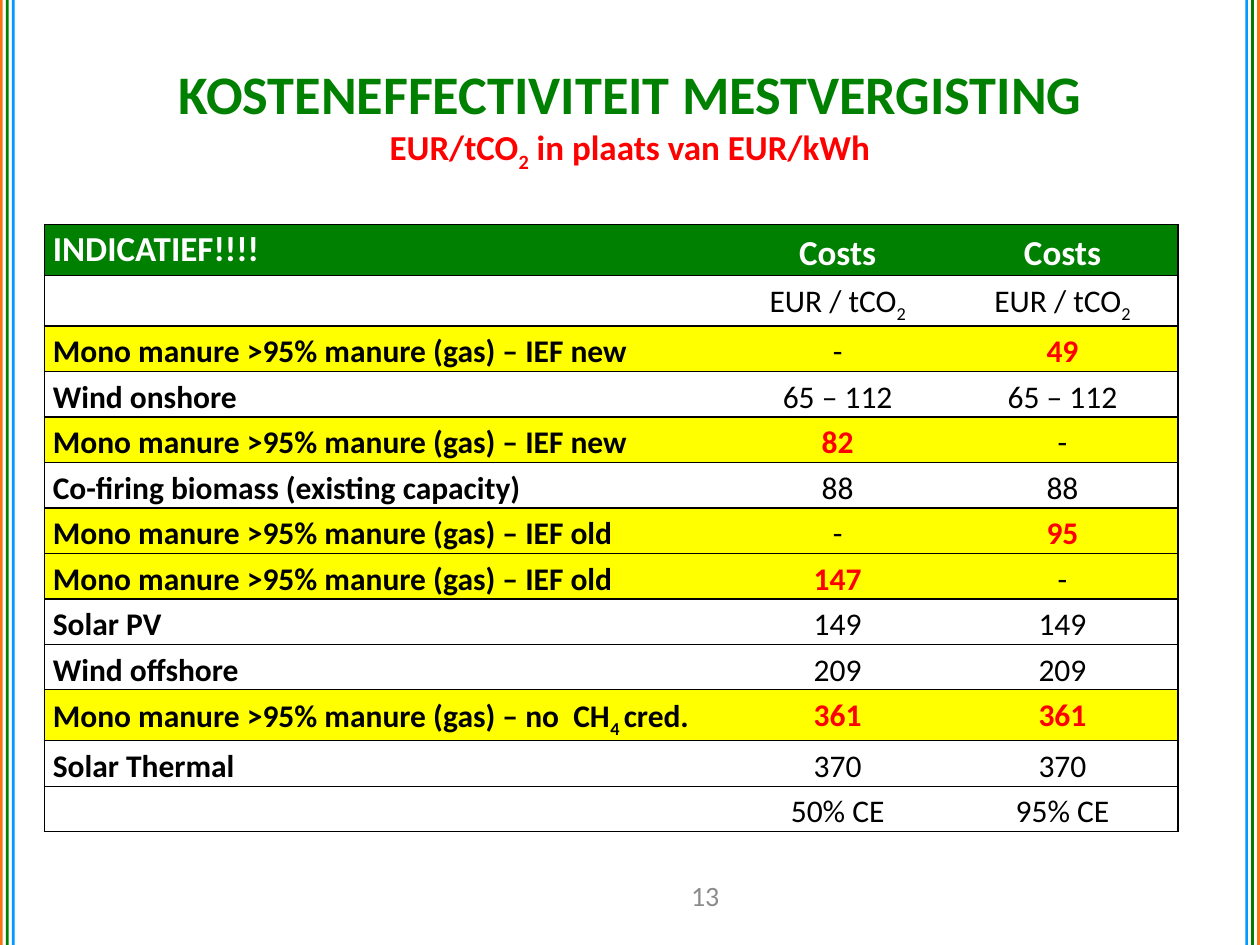
from dataclasses import dataclass
from lxml.etree import SubElement
from pptx import Presentation
from pptx.dml.color import RGBColor
from pptx.enum.shapes import MSO_SHAPE
from pptx.enum.text import MSO_ANCHOR, PP_ALIGN
from pptx.oxml.ns import qn
from pptx.util import Pt


@dataclass(frozen=True)
class Theme:
    font: str = "Calibri"
    green: str = "008000"
    orange: str = "F67616"
    blue: str = "0099FF"
    red: str = "FF0000"
    yellow: str = "FFFF00"
    white: str = "FFFFFF"
    black: str = "000000"
    grey: str = "8C8C8C"
    title: int = 31
    head: int = 20
    body: int = 18
    small: int = 16


def write(para, text, font, size, color, bold=False, align=PP_ALIGN.CENTER, space=None):
    """Fill a paragraph; parts between underscores become subscripts."""
    para.alignment = align
    if space:
        para.line_spacing = space
    for i, part in enumerate(text.split("_")):
        run = para.add_run()
        run.text = part
        run.font.name = font
        run.font.size = Pt(size)
        run.font.bold = bold
        run.font.color.rgb = RGBColor.from_string(color)
        if i % 2:
            run.font._element.set("baseline", "-25000")


def rule(cell, sides, color):
    """Draw the named cell sides and hide the others."""
    props = cell._tc.get_or_add_tcPr()
    for i, side in enumerate("LRTB"):
        line = SubElement(props, qn(f"a:ln{side}"), w=str(Pt(0.75)))
        if side in sides:
            fill = SubElement(line, qn("a:solidFill"))
            SubElement(fill, qn("a:srgbClr"), val=color)
        else:
            SubElement(line, qn("a:noFill"))
        props.insert(i, line)


class Deck:
    def __init__(self, theme):
        self.theme = theme
        self.file = Presentation()
        self.file.slide_width, self.file.slide_height = Pt(720), Pt(540)
        self.slide = self.file.slides.add_slide(self.file.slide_layouts[6])

    def bar(self, left, color):
        shape = self.slide.shapes.add_shape(
            MSO_SHAPE.RECTANGLE, Pt(left), Pt(0), Pt(1.6), Pt(540))
        shape.shadow.inherit = False
        shape.fill.solid()
        shape.fill.fore_color.rgb = RGBColor.from_string(color)
        shape.line.fill.background()

    def text(self, left, top, width, height, lines):
        """Add a box; each line is its text and a dict of format."""
        box = self.slide.shapes.add_textbox(Pt(left), Pt(top), Pt(width), Pt(height))
        frame = box.text_frame
        frame.word_wrap = True
        frame.vertical_anchor = MSO_ANCHOR.MIDDLE
        for i, (text, form) in enumerate(lines):
            para = frame.add_paragraph() if i else frame.paragraphs[0]
            write(para, text, self.theme.font, **form)

    def cell(self, cell, text, fill, sides, **form):
        cell.margin_left = cell.margin_right = Pt(5)
        cell.margin_top, cell.margin_bottom = Pt(0.6), Pt(0)
        if fill:
            cell.fill.solid()
            cell.fill.fore_color.rgb = RGBColor.from_string(fill)
        else:
            cell.fill.background()
        rule(cell, sides, self.theme.black)
        para = cell.text_frame.paragraphs[0]
        if text:
            write(para, text, self.theme.font, **form)
        else:
            para.font.size = Pt(self.theme.body)

    def table(self, left, top, widths, rows):
        t = self.theme
        tall = [29 if i == 0 or "_" in "".join(row) else 26
                for i, row in enumerate(rows)]
        grid = self.slide.shapes.add_table(
            len(rows), len(widths), Pt(left), Pt(top),
            Pt(sum(widths)), Pt(sum(tall))).table
        grid.first_row = grid.horz_banding = False
        for col, width in zip(grid.columns, widths):
            col.width = Pt(width)
        for r, row in enumerate(rows):
            grid.rows[r].height = Pt(tall[r])
            mono = row[0].startswith("Mono")
            fill = t.green if r == 0 else t.yellow if mono else None
            for c, text in enumerate(row):
                sides = "TB" + {0: "L", len(row) - 1: "R"}.get(c, "")
                form = dict(size=t.body, color=t.black, bold=c == 0, space=1.15)
                if r == 0:
                    form.update(size=t.head, color=t.white, bold=True)
                elif mono and c and text != "-":
                    form.update(color=t.red, bold=True)
                if c == 0:
                    form["align"] = PP_ALIGN.JUSTIFY if r else PP_ALIGN.LEFT
                    form["space"] = 1.15 if r else 1.07
                self.cell(grid.cell(r, c), text, fill, sides, **form)


MONO = "Mono manure >95% manure (gas) – "
ROWS = [
    ("INDICATIEF!!!!", "Costs", "Costs"),
    ("", "EUR / tCO_2_", "EUR / tCO_2_"),
    (MONO + "IEF new", "-", "49"),
    ("Wind onshore", "65 – 112", "65 – 112"),
    (MONO + "IEF new", "82", "-"),
    ("Co-firing biomass (existing capacity)", "88", "88"),
    (MONO + "IEF old", "-", "95"),
    (MONO + "IEF old", "147", "-"),
    ("Solar PV", "149", "149"),
    ("Wind offshore", "209", "209"),
    (MONO + "no  CH_4 _cred.", "361", "361"),
    ("Solar Thermal", "370", "370"),
    ("", "50% CE", "95% CE"),
]


def main():
    t = Theme()
    deck = Deck(t)
    for i, color in enumerate((t.orange, t.green, t.blue)):
        deck.bar(3.4 * i, color)
        deck.bar(718.4 - 3.4 * i, color)
    deck.text(371.5, 497, 63, 29, [("13", dict(size=t.small, color=t.grey))])
    deck.text(36, 21.6, 648, 90, [
        ("KOSTENEFFECTIVITEIT MESTVERGISTING",
         dict(size=t.title, color=t.green, bold=True)),
        ("EUR/tCO_2_ in plaats van EUR/kWh",
         dict(size=t.head, color=t.red, bold=True)),
    ])
    deck.table(25.2, 128.3, (391, 125, 132), ROWS)
    deck.file.save("out.pptx")


if __name__ == "__main__":
    main()
